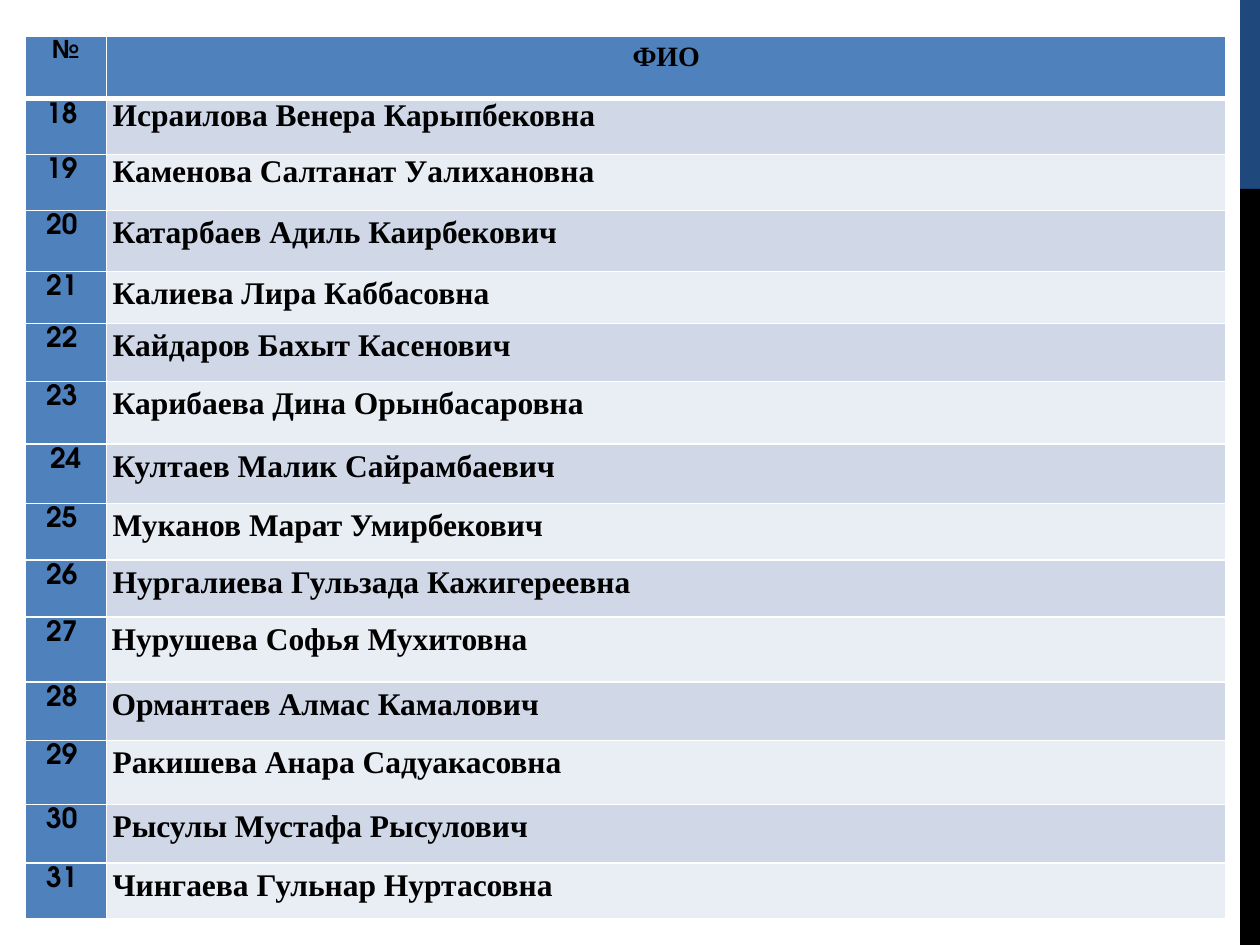
import pptx
import pptx.util
import pptx.dml.color
import pptx.enum.shapes
import pptx.enum.text
import pptx.oxml

Cm = pptx.util.Cm
Pt = pptx.util.Pt
ALIGN = pptx.enum.text.PP_ALIGN

NAMES = [
    "Исраилова Венера Карыпбековна",
    "Каменова Салтанат Уалихановна",
    "Катарбаев Адиль Каирбекович",
    "Калиева Лира Каббасовна",
    "Кайдаров Бахыт Касенович",
    "Карибаева Дина Орынбасаровна",
    "Култаев Малик Сайрамбаевич",
    "Муканов Марат Умирбекович",
    "Нургалиева Гульзада Кажигереевна",
    "Нурушева Софья Мухитовна",
    "Ормантаев Алмас Камалович",
    "Ракишева Анара Садуакасовна",
    "Рысулы Мустафа Рысулович",
    "Чингаева Гульнар Нуртасовна",
]
FIRST = 18
ROWS = [1.25, 1.12, 1.13, 1.23, 1.05, 1.17, 1.26, 1.2,
        1.14, 1.15, 1.31, 1.18, 1.29, 1.18, 1.13]
COLS = [1.65, 22.56]
BLUE = "4F81BD"
BANDS = ["D0D8E8", "E9EDF4"]
SANS = "TeX Gyre Adventor"
SERIF = "Times New Roman"


def color(code):
    return pptx.dml.color.RGBColor.from_string(code)


def paint(item, code):
    item.fill.solid()
    item.fill.fore_color.rgb = color(code)


def apply(item, form):
    for key, value in form.items():
        setattr(item, key, value)


def add_bar(slide, top, height, code):
    kind = pptx.enum.shapes.MSO_SHAPE.RECTANGLE
    bar = slide.shapes.add_shape(kind, Cm(25), Cm(top), Cm(0.4), Cm(height))
    paint(bar, code)
    bar.line.fill.background()
    bar.shadow.inherit = False


def add_edge(cell, side, width):
    space = pptx.oxml.ns.nsdecls("a")
    edge = pptx.oxml.parse_xml(
        f'<a:{side} {space} w="{Pt(width)}"><a:solidFill>'
        f'<a:srgbClr val="FFFFFF"/></a:solidFill></a:{side}>')
    props = cell._tc.get_or_add_tcPr()
    props.append(edge)


def fill_cell(cell, text, font, size, fill, align, space=1.15, inset=0.12,
              top=1, base=1):
    apply(cell, {"margin_left": Cm(inset), "margin_right": Cm(inset),
                 "margin_top": 0, "margin_bottom": 0})
    for side, width in zip(("lnL", "lnR", "lnT", "lnB"), (1, 1, top, base)):
        add_edge(cell, side, width)
    paint(cell, fill)
    para = cell.text_frame.paragraphs[0]
    apply(para, {"alignment": align, "line_spacing": space})
    run = para.add_run()
    run.text = text
    apply(run.font, {"name": font, "size": Pt(size), "bold": True})
    run.font.color.rgb = color("000000")


def add_list(slide):
    frame = slide.shapes.add_table(len(ROWS), len(COLS), Cm(0.5), Cm(0.74),
                                   Cm(sum(COLS)), Cm(sum(ROWS)))
    table = frame.table
    for col, width in zip(table.columns, COLS):
        col.width = Cm(width)
    for row, height in zip(table.rows, ROWS):
        row.height = Cm(height)
    fill_cell(table.cell(0, 0), "№", SANS, 14, BLUE, ALIGN.CENTER, base=3)
    fill_cell(table.cell(0, 1), "ФИО", SERIF, 16, BLUE, ALIGN.CENTER, base=3)
    for row, name in enumerate(NAMES, 1):
        num = FIRST + row - 1
        label = "24" if num == 24 else f"{num} "
        top = 3 if row == 1 else 1
        fill_cell(table.cell(row, 0), label, SANS, 16, BLUE, ALIGN.CENTER,
                  top=top)
        fill_cell(table.cell(row, 1), name, SERIF, 18, BANDS[(row - 1) % 2],
                  ALIGN.LEFT, space=1.0 if row < 3 else 1.15,
                  inset=0.1 if num in (27, 28) else 0.12, top=top)


def main():
    deck = pptx.Presentation()
    apply(deck, {"slide_width": Cm(25.4), "slide_height": Cm(19.05)})
    slide = deck.slides.add_slide(deck.slide_layouts[6])
    add_bar(slide, 0, 3.81, "1F497D")
    add_bar(slide, 3.81, 15.24, "000000")
    add_list(slide)
    deck.save("out.pptx")


if __name__ == "__main__":
    main()
